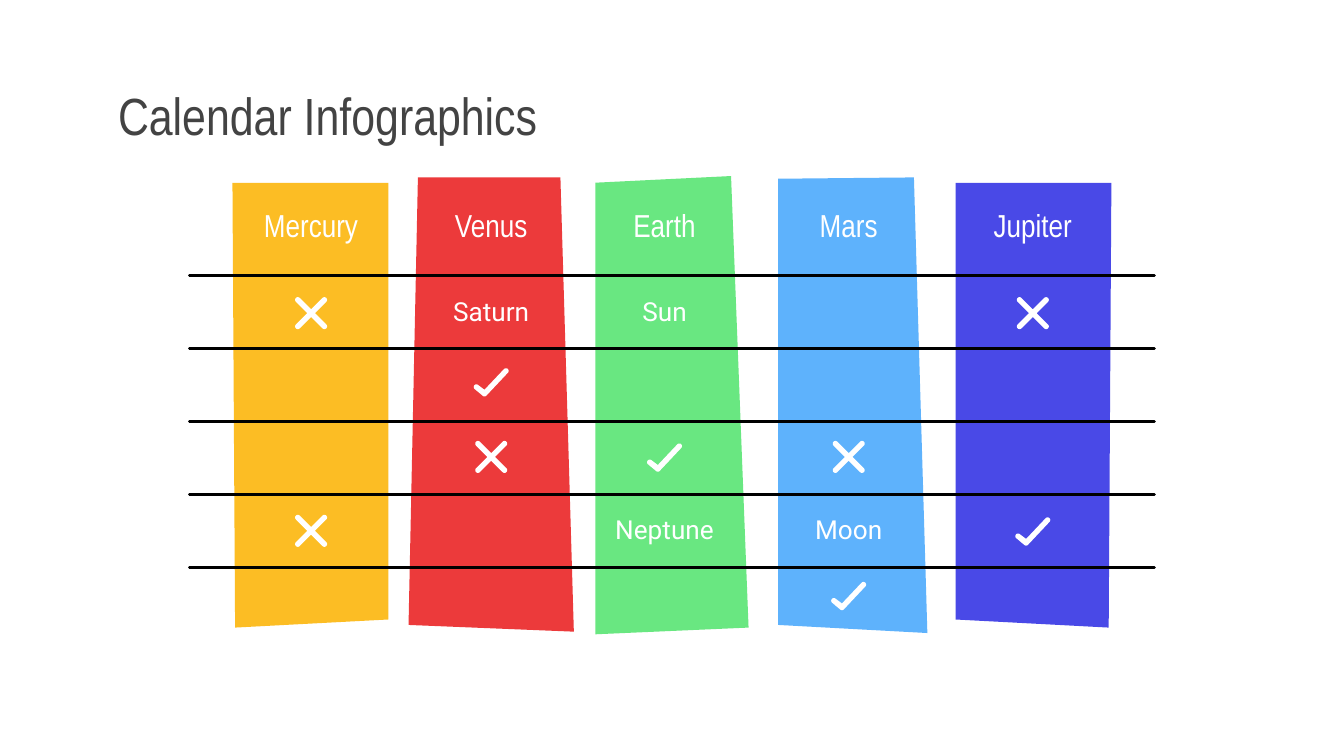
from math import cos, pi, radians, sin, sqrt

from lxml.etree import SubElement
from pptx import Presentation
from pptx.dml.color import RGBColor
from pptx.enum.shapes import MSO_CONNECTOR
from pptx.enum.text import MSO_ANCHOR, PP_ALIGN
from pptx.oxml.ns import qn
from pptx.util import Inches, Pt

COLORS = {
    "title": "434343", "white": "FFFFFF", "line": "000000",
    "yellow": "FCBD24", "red": "EC3A3B", "green": "69E781",
    "sky": "5EB2FC", "blue": "4949E7",
}
FONTS = {
    "title": {"name": "Arial Narrow", "size": Pt(28)},
    "head": {"name": "Arial Narrow", "size": Pt(17)},
    "cell": {"name": "Roboto", "size": Pt(14)},
}
FRAME = {
    "word_wrap": True, "vertical_anchor": MSO_ANCHOR.MIDDLE,
    "margin_left": Inches(0.1), "margin_right": Inches(0.1),
    "margin_top": Inches(0.1), "margin_bottom": Inches(0.1),
}

# Marks are outlines of arcs: x, y, radius, first and last angle in degrees.
# A radius of zero is a sharp corner.
THIN, REACH = 0.02, 0.14
CROSS = []
for turn in range(0, 360, 90):
    notch, tip = radians(turn), radians(turn + 45)
    CROSS += [
        (THIN * sqrt(2) * cos(notch), THIN * sqrt(2) * sin(notch), 0, 0, 0),
        (REACH * cos(tip), REACH * sin(tip), THIN, turn - 45, turn + 135),
    ]
CHECK = [
    (-0.11, 0.04, 0.02, 123, 303),
    (-0.05, 0.06, 0, 0, 0),
    (0.11, -0.08, 0.02, -134, 46),
    (-0.05, 0.09, 0.02, 46, 123),
]
MARKS = {"cross": CROSS, "check": CHECK}

# Left edge, colour, heading, corners from the box's top left, cells by row
COLUMNS = [
    (1.7, "yellow", "Mercury",
     [(0.03, 0.05), (0.05, 3.36), (1.19, 3.3), (1.19, 0.05)],
     {0: "cross", 3: "cross"}),
    (3.04, "red", "Venus",
     [(0.07, 0.01), (0, 3.34), (1.23, 3.39), (1.13, 0.01)],
     {0: "Saturn", 1: "check", 2: "cross"}),
    (4.33, "green", "Earth",
     [(0.1, 0.05), (0.1, 3.41), (1.24, 3.36), (1.11, 0)],
     {0: "Sun", 2: "check", 3: "Neptune"}),
    (5.7, "sky", "Mars",
     [(0.09, 0.02), (0.09, 3.34), (1.2, 3.4), (1.1, 0.01)],
     {2: "cross", 3: "Moon", 4: "check"}),
    (7.07, "blue", "Jupiter",
     [(0.04, 0.05), (0.04, 3.3), (1.18, 3.36), (1.2, 0.05)],
     {0: "cross", 3: "check"}),
]
ROWS = [1.02, 1.53, 2.09, 2.64, 3.12]


def rgb(name):
    return RGBColor.from_string(COLORS[name])


def add_text(slide, box, text, style, color, align=PP_ALIGN.LEFT):
    frame = slide.shapes.add_textbox(*map(Inches, box)).text_frame
    for key, value in FRAME.items():
        setattr(frame, key, value)
    para = frame.paragraphs[0]
    para.alignment = align
    run = para.add_run()
    run.text = text
    for key, value in FONTS[style].items():
        setattr(run.font, key, value)
    run.font.color.rgb = rgb(color)


def add_outline(slide, left, top, points, color):
    """Fill a closed outline whose points are relative to left and top."""
    first, *rest = [(Inches(left + x), Inches(top + y)) for x, y in points]
    pen = slide.shapes.build_freeform(*first)
    pen.add_line_segments(rest, close=True)
    shape = pen.convert_to_shape()
    shape.shadow.inherit = False
    shape.fill.solid()
    shape.fill.fore_color.rgb = rgb(color)
    shape.line.fill.background()


def add_mark(slide, x, y, kind):
    points = []
    for dx, dy, size, start, end in MARKS[kind]:
        steps = 10 if size else 0
        for step in range(steps + 1):
            angle = (start + (end - start) * step / max(steps, 1)) * pi / 180
            points.append((dx + size * cos(angle), dy + size * sin(angle)))
    add_outline(slide, x, y, points, "white")


def add_column(slide, box, color, head, corners, cells):
    left, top, width, _ = box
    add_outline(slide, left, top, corners, color)

    def label(mid, text, style):
        place = (left, top + mid - 0.22, width, 0.43)
        add_text(slide, place, text, style, "white", PP_ALIGN.CENTER)

    label(0.37, head, "head")
    for row, cell in cells.items():
        if cell in MARKS:
            add_mark(slide, left + width / 2, top + ROWS[row], cell)
        else:
            label(ROWS[row] - 0.01, cell, "cell")


def add_rules(slide, box, count):
    """Spread level lines evenly from the top to the bottom of the box."""
    left, top, width, height = box
    for index in range(count):
        y = top + height * index / (count - 1)
        rule = slide.shapes.add_connector(
            MSO_CONNECTOR.STRAIGHT,
            *map(Inches, (left, y, left + width, y)))
        rule.line.width = Pt(1.6)
        rule.line.color.rgb = rgb("line")
        rule.line._get_or_add_ln().set("cap", "rnd")
        SubElement(rule._element.spPr, qn("a:effectLst"))


def main():
    deck = Presentation()
    deck.slide_width = Inches(10)
    deck.slide_height = deck.slide_width * 9 // 16
    slide = deck.slides.add_slide(deck.slide_layouts[6])
    add_text(slide, (0.78, 0.59, 8.45, 0.53), "Calendar Infographics",
             "title", "title")
    for left, *parts in COLUMNS:
        add_column(slide, (left, 1.31, 1.23, 3.41), *parts)
    add_rules(slide, (1.41, 2.05, 7.18, 2.17), 5)
    deck.save("out.pptx")


if __name__ == "__main__":
    main()
